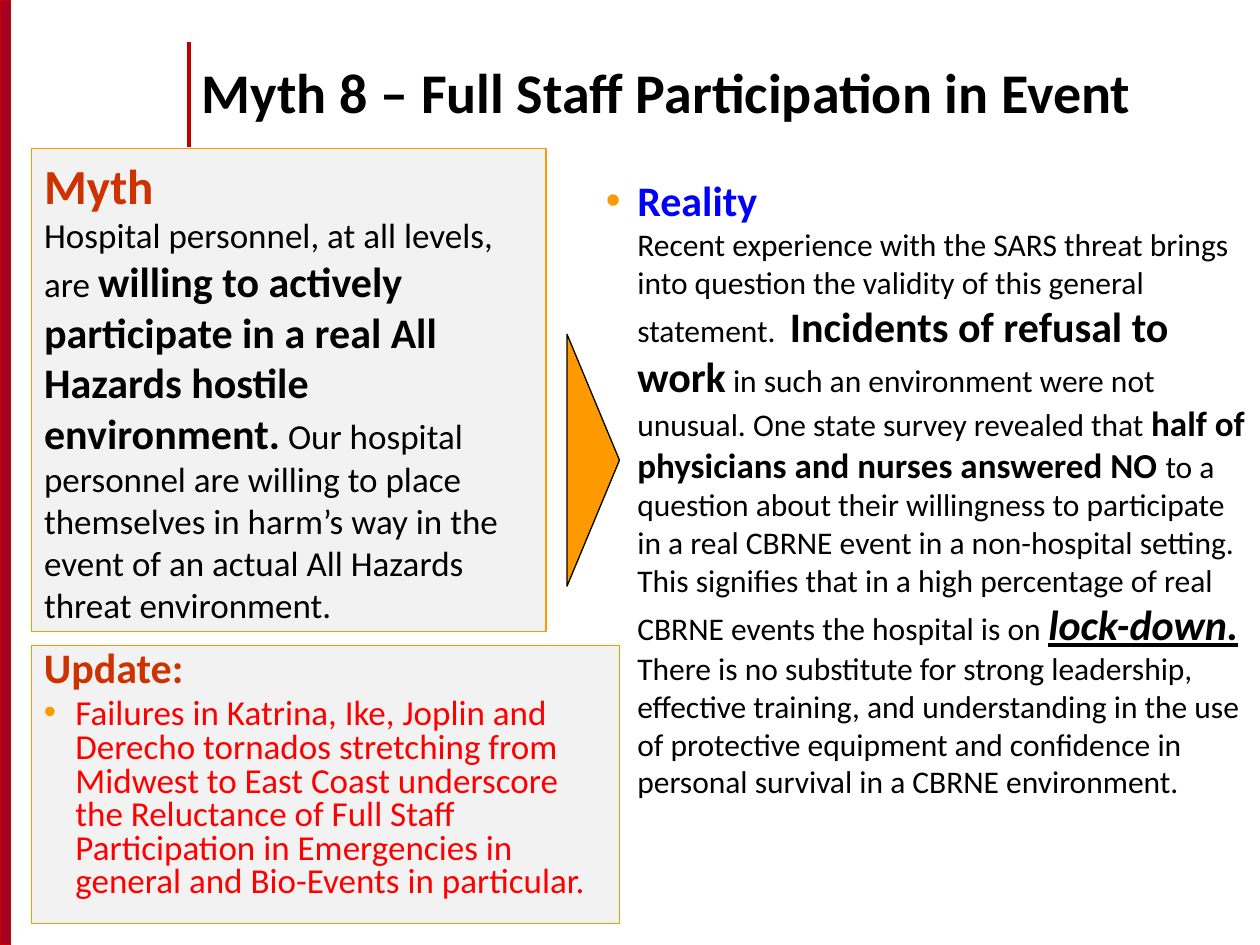
import copy

import pptx
import pptx.dml.color
import pptx.enum.shapes
import pptx.enum.text
import pptx.util
from lxml import etree

Pt = pptx.util.Pt
SHAPE = pptx.enum.shapes.MSO_SHAPE
ANCHOR = pptx.enum.text.MSO_ANCHOR
A = "{http://schemas.openxmlformats.org/drawingml/2006/main}"


def rgb(value):
    return pptx.dml.color.RGBColor.from_string(value)


class Deck:
    font = "Calibri"
    orange, black, panel, heading = "FF9900", "000000", "F2F2F2", "CC3300"

    def __init__(self, prs, layout):
        self.slide = prs.slides.add_slide(prs.slide_layouts[layout])

    def paint(self, sp, fill, line, width=0.75):
        sp.fill.solid()
        sp.fill.fore_color.rgb = rgb(fill)
        sp.line.color.rgb = rgb(line)
        sp.line.width = Pt(width)

    def shape(self, kind, box, fill, line, width=0.75):
        sp = self.slide.shapes.add_shape(kind, *map(Pt, box))
        sp.shadow.inherit = False
        self.paint(sp, fill, line, width)
        return sp

    def line(self, start, end, color, width):
        cx = self.slide.shapes.add_connector(
            pptx.enum.shapes.MSO_CONNECTOR.STRAIGHT, *map(Pt, start + end))
        cx.line.color.rgb = rgb(color)
        cx.line.width = Pt(width)
        etree.SubElement(cx._element.spPr, A + "effectLst")

    def placeholder(self, index, box):
        sp = self.slide.placeholders[index]
        for name, value in zip(("left", "top", "width", "height"), box):
            setattr(sp, name, Pt(value))
        return sp

    def text(self, sp, paragraphs, anchor=ANCHOR.TOP):
        tf = sp.text_frame
        frame = {"word_wrap": True, "vertical_anchor": anchor,
                 "auto_size": pptx.enum.text.MSO_AUTO_SIZE.NONE}
        for name, value in frame.items():
            setattr(tf, name, value)
        for i, (runs, bullet, spacing) in enumerate(paragraphs):
            p = tf.add_paragraph() if i else tf.paragraphs[0]
            self.bullet(p, bullet)
            layout = {"alignment": pptx.enum.text.PP_ALIGN.LEFT,
                      "line_spacing": spacing, "space_before": Pt(4 if i else 0)}
            for name, value in layout.items():
                setattr(p, name, value)
            for run in runs:
                self.run(p, *run)

    def bullet(self, p, on):
        pPr = p._p.get_or_add_pPr()
        indent = Pt(18) if on else 0
        pPr.set("marL", str(indent))
        pPr.set("indent", str(-indent))
        if on:
            color = etree.SubElement(pPr, A + "buClr")
            etree.SubElement(color, A + "srgbClr", val=self.orange)
            etree.SubElement(pPr, A + "buFont", typeface="Arial")
            etree.SubElement(pPr, A + "buChar", char="•")
        else:
            etree.SubElement(pPr, A + "buNone")

    def run(self, p, text, size, color=black, **style):
        r = p.add_run()
        r.text = text.rstrip("\n")
        style = {"name": self.font, "size": Pt(size), "bold": False, **style}
        for name, value in style.items():
            setattr(r.font, name, value)
        r.font.color.rgb = rgb(color)
        if text.endswith("\n"):
            # The break takes the run's format, so the line keeps its height
            p.add_line_break()
            p._p[-1].insert(0, copy.deepcopy(r._r.rPr))


def main():
    prs = pptx.Presentation()
    prs.slide_width, prs.slide_height = Pt(720), Pt(540)
    s = Deck(prs, 3)

    # Red edge and title rule
    s.shape(SHAPE.RECTANGLE, (0, 0, 6, 540), "A50021", "CC0000", 1)
    s.line((108, 24), (108, 84), "C00000", 2.25)

    # Title
    title = s.placeholder(0, (108, 18, 594, 74))
    s.text(title, [([("Myth 8 – Full Staff Participation in Event", 32, s.black,
                      )], False, 0.85)], ANCHOR.MIDDLE)
    title.text_frame.paragraphs[0].runs[0].font.bold = True

    # Myth panel
    myth = s.placeholder(1, (18, 85, 294, 276))
    s.paint(myth, s.panel, s.orange)
    s.text(myth, [([
        ("Myth\n", 28, s.heading, ),
        ("Hospital personnel, at all levels, are ", 20),
        ("willing to actively participate in a real All Hazards hostile "
         "environment.", 24),
        (" Our hospital personnel are willing to place themselves in harm’s way "
         "in the event of an actual All Hazards threat environment.", 20),
    ], False, 1.0)])

    # Reality text
    reality = s.placeholder(2, (339, 96, 381, 288))
    s.text(reality, [([
        ("Reality\n", 24, "0000FF"),
        ("Recent experience with the SARS threat brings into question the "
         "validity of this general statement.  ", 18),
        ("Incidents of refusal to work", 24),
        (" in such an environment were not unusual. One state survey revealed "
         "that ", 18),
        ("half of physicians and nurses answered NO ", 20),
        ("to a question about their willingness to participate in a real CBRNE "
         "event in a non-hospital setting. This signifies that in a high "
         "percentage of real CBRNE events the hospital is on ", 18),
        ("lock-down.", 24),
        (" There is no substitute for strong leadership, effective training, and "
         "understanding in the use of protective equipment and confidence in "
         "personal survival in a CBRNE environment.", 18),
    ], True, 1.0)])

    # Emphasis: headings and key phrases
    for sp, bold in ((myth, (0, 2)), (reality, (0, 2, 4, 6))):
        for i in bold:
            sp.text_frame.paragraphs[0].runs[i].font.bold = True
    lock_down = reality.text_frame.paragraphs[0].runs[6].font
    lock_down.italic = lock_down.underline = True

    # Pointer from myth to reality
    pointer = s.shape(SHAPE.ISOSCELES_TRIANGLE, (267, 248, 144, 30),
                      s.orange, s.black)
    pointer.rotation = 90

    # Update panel
    update = s.shape(SHAPE.RECTANGLE, (18, 368.75, 336, 159), s.panel, s.orange)
    s.text(update, [
        ([("Update:", 24, s.heading)], False, 0.8),
        ([("Failures in Katrina, Ike, Joplin and Derecho tornados stretching "
           "from Midwest to East Coast underscore the Reluctance of Full Staff "
           "Participation in Emergencies in general and Bio-Events in "
           "particular.", 20, "FF0000")], True, 0.8),
    ])
    update.text_frame.paragraphs[0].runs[0].font.bold = True

    prs.save("out.pptx")


if __name__ == "__main__":
    main()
